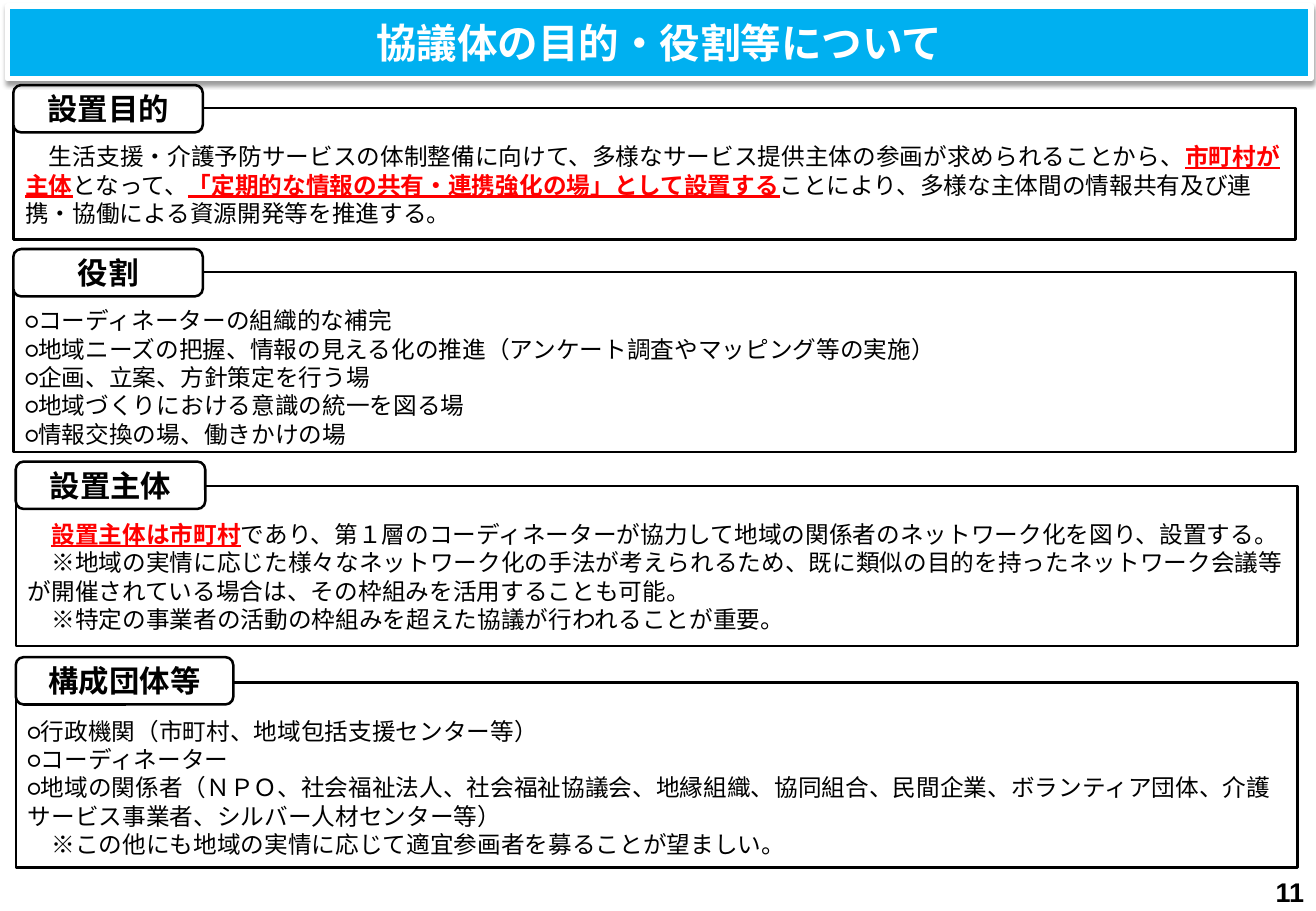
from dataclasses import dataclass

from lxml.etree import SubElement
from pptx import Presentation
from pptx.dml.color import RGBColor
from pptx.enum.shapes import MSO_SHAPE as Preset
from pptx.enum.text import MSO_ANCHOR as Anchor, PP_ALIGN as Align
from pptx.oxml import parse_xml
from pptx.oxml.ns import nsdecls, qn
from pptx.util import Inches, Pt


@dataclass(frozen=True)
class Theme:
    banner: RGBColor = RGBColor(0x00, 0xB0, 0xF0)
    white: RGBColor = RGBColor(0xFF, 0xFF, 0xFF)
    black: RGBColor = RGBColor(0x00, 0x00, 0x00)
    accent: RGBColor = RGBColor(0xFF, 0x00, 0x00)
    heading_font: str = "Arial"
    body_font: str = "Calibri"
    title_size: int = 24
    label_size: int = 18
    number_size: int = 16
    body_size: int = 14
    body_pitch: float = 16.8
    outline: float = 1.5


@dataclass(frozen=True)
class Run:
    text: str
    key: bool = False  # key phrases are red, bold and underlined


@dataclass(frozen=True)
class Section:
    label: str
    left: float
    label_top: float
    label_width: float
    box_top: float
    box_height: float
    paragraphs: list[list[Run]]


THEME = Theme()
BOX_WIDTH, LABEL_HEIGHT = 10.55, 0.39

SECTIONS = [
    Section("設置目的", 0.11, 0.7, 1.56, 0.89, 1.08, [[
        Run("　生活支援・介護予防サービスの体制整備に向けて、多様なサービス提供主体の参画が求められることから、"),
        Run("市町村が主体", key=True),
        Run("となって、"),
        Run("「定期的な情報の共有・連携強化の場」として設置する", key=True),
        Run("ことにより、多様な主体間の情報共有及び連携・協働による資源開発等を推進する。"),
    ]]),
    Section("役割", 0.11, 2.05, 1.56, 2.24, 1.48, [
        [Run("○コーディネーターの組織的な補完")],
        [Run("○地域ニーズの把握、情報の見える化の推進（アンケート調査やマッピング等の実施）")],
        [Run("○企画、立案、方針策定を行う場")],
        [Run("○地域づくりにおける意識の統一を図る場")],
        [Run("○情報交換の場、働きかけの場")],
    ]),
    Section("設置主体", 0.13, 3.8, 1.56, 4.0, 1.32, [
        [Run("　"), Run("設置主体は市町村", key=True),
         Run("であり、第１層のコーディネーターが協力して地域の関係者のネットワーク化を図り、設置する。")],
        [Run("　※地域の実情に応じた様々なネットワーク化の手法が考えられるため、"
             "既に類似の目的を持ったネットワーク会議等が開催されている場合は、その枠組みを活用することも可能。")],
        [Run("　※特定の事業者の活動の枠組みを超えた協議が行われることが重要。")],
    ]),
    Section("構成団体等", 0.13, 5.41, 1.79, 5.62, 1.52, [
        [Run("○行政機関（市町村、地域包括支援センター等）")],
        [Run("○コーディネーター")],
        [Run("○地域の関係者（ＮＰＯ、社会福祉法人、社会福祉協議会、地縁組織、協同組合、民間企業、"
             "ボランティア団体、介護サービス事業者、シルバー人材センター等）")],
        [Run("　※この他にも地域の実情に応じて適宜参画者を募ることが望ましい。")],
    ]),
]


def apply_format(target, values: dict) -> None:
    for name, value in values.items():
        setattr(target, name, value)


def add_run(paragraph, text: str, color: RGBColor, font: str, size: int,
            bold: bool = False, underline: bool = False) -> None:
    run = paragraph.add_run()
    run.text = text
    apply_format(run.font, {"name": font, "size": Pt(size), "bold": bold,
                            "underline": underline})
    run.font.color.rgb = color
    # Japanese characters follow the same font setting
    SubElement(run.font._element, qn("a:ea"), typeface=font)


def add_panel(slide, preset: Preset, at: tuple[float, float, float, float],
              fill: RGBColor | None, line: RGBColor, line_width: float):
    panel = slide.shapes.add_shape(preset, *map(Inches, at))
    panel.shadow.inherit = False
    if fill is None:
        panel.fill.background()
    else:
        panel.fill.solid()
        panel.fill.fore_color.rgb = fill
    panel.line.color.rgb = line
    panel.line.width = Pt(line_width)
    return panel


def add_single_line(frame, text: str, align: Align, color: RGBColor,
                    font: str, size: int) -> None:
    apply_format(frame, {"word_wrap": True, "vertical_anchor": Anchor.MIDDLE,
                         "margin_top": 0, "margin_bottom": 0})
    frame.paragraphs[0].alignment = align
    add_run(frame.paragraphs[0], text, color, font, size, bold=True)


def add_section(slide, section: Section) -> None:
    # Framed body, with room at the top for the label
    box = add_panel(slide, Preset.RECTANGLE,
                    (section.left, section.box_top, BOX_WIDTH, section.box_height),
                    None, THEME.black, THEME.outline)
    frame = box.text_frame
    apply_format(frame, {"word_wrap": True, "vertical_anchor": Anchor.TOP,
                         "margin_top": Inches(0.28)})
    for index, runs in enumerate(section.paragraphs):
        paragraph = frame.add_paragraph() if index else frame.paragraphs[0]
        apply_format(paragraph, {"alignment": Align.LEFT,
                                 "line_spacing": Pt(THEME.body_pitch)})
        for run in runs:
            add_run(paragraph, run.text, THEME.accent if run.key else THEME.black,
                    THEME.body_font, THEME.body_size, run.key, run.key)

    # Rounded label over the top edge
    label = add_panel(slide, Preset.ROUNDED_RECTANGLE,
                      (section.left, section.label_top, section.label_width, LABEL_HEIGHT),
                      THEME.white, THEME.black, THEME.outline)
    add_single_line(label.text_frame, section.label, Align.CENTER, THEME.black,
                    THEME.body_font, THEME.label_size)


def add_banner(slide, title: str) -> None:
    banner = add_panel(slide, Preset.RECTANGLE, (0.06, 0.05, 10.73, 0.6),
                       THEME.banner, THEME.white, 3)
    add_single_line(banner.text_frame, title, Align.CENTER, THEME.white,
                    THEME.heading_font, THEME.title_size)
    effects = banner._element.spPr.find(qn("a:effectLst"))
    effects.append(parse_xml(
        f'<a:outerShdw {nsdecls("a")} blurRad="{Pt(3.1)}" dist="{Pt(1.6)}" '
        f'dir="5400000" rotWithShape="0"><a:srgbClr val="{THEME.black}">'
        '<a:alpha val="38000"/></a:srgbClr></a:outerShdw>'))


def main() -> None:
    deck = Presentation()
    apply_format(deck, {"slide_width": Inches(10.83), "slide_height": Inches(7.5)})
    slide = deck.slides.add_slide(deck.slide_layouts[6])

    for section in SECTIONS:
        add_section(slide, section)
    add_banner(slide, "協議体の目的・役割等について")

    # Page number
    number = slide.shapes.add_textbox(*map(Inches, (10.29, 7.2, 0.54, 0.28)))
    add_single_line(number.text_frame, "11", Align.RIGHT, THEME.black,
                    THEME.heading_font, THEME.number_size)

    deck.save("out.pptx")


if __name__ == "__main__":
    main()
